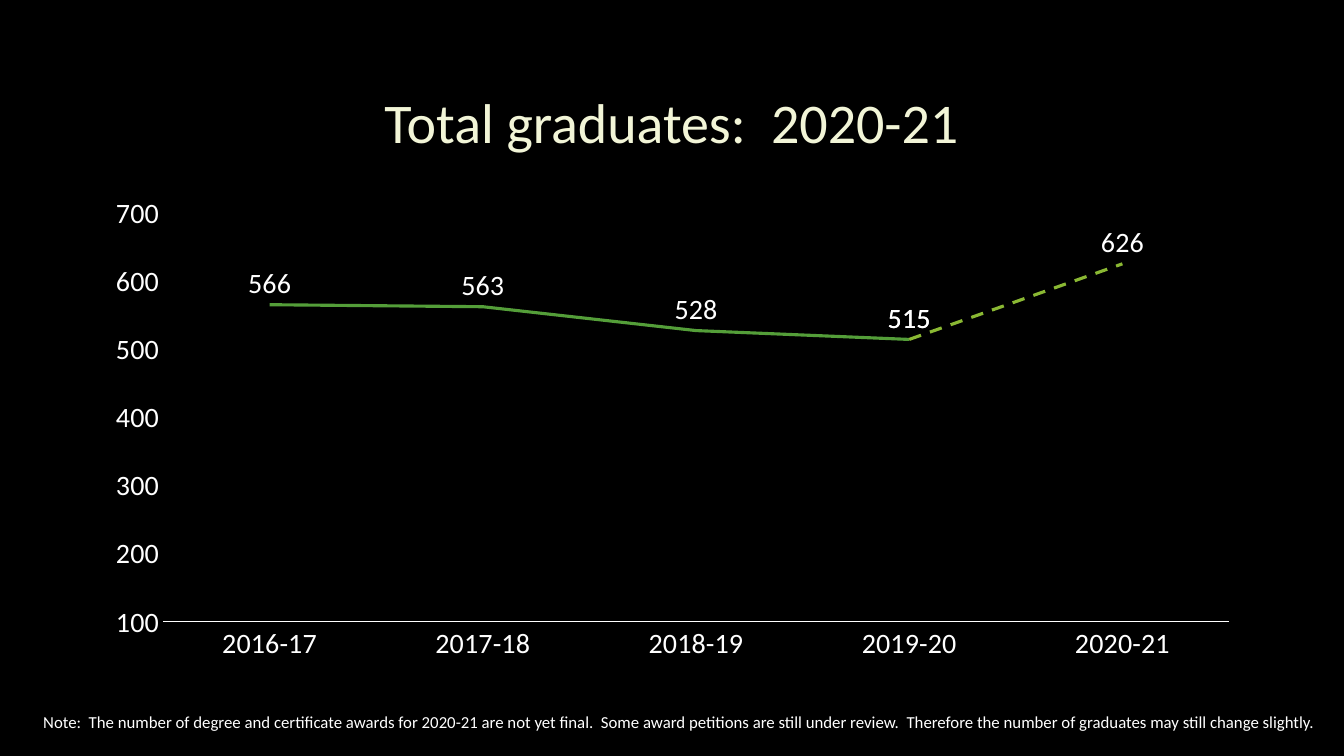
from lxml import etree
from pptx import Presentation
from pptx.chart.data import CategoryChartData
from pptx.dml.color import RGBColor
from pptx.enum.chart import XL_CHART_TYPE as ChartType
from pptx.enum.chart import XL_LABEL_POSITION as LabelPosition
from pptx.enum.chart import XL_MARKER_STYLE as MarkerStyle
from pptx.enum.chart import XL_TICK_MARK as TickMark
from pptx.enum.dml import MSO_LINE as LineDash
from pptx.enum.text import MSO_ANCHOR as Anchor
from pptx.enum.text import MSO_AUTO_SIZE as AutoSize
from pptx.enum.text import PP_ALIGN as Align
from pptx.oxml import parse_xml
from pptx.util import Inches, Pt

FONT = "Calibri"
COLORS = {
    "background": "000000",
    "title": "F2F5D7",
    "title_outline": "404040",
    "text": "FFFFFF",
    "final": "549E39",
    "provisional": "8AB833",
}
DRAWING = "http://schemas.openxmlformats.org/drawingml/2006/main"

YEARS = ["2016-17", "2017-18", "2018-19", "2019-20", "2020-21"]
SERIES = [
    ("Series 1", [566, 563, 528, 515, None], "final", LineDash.SOLID),
    ("Series 2", [None, None, None, 515, 626], "provisional", LineDash.DASH),
]


def color(name):
    return RGBColor.from_string(COLORS[name])


def style_font(font, size, color_name):
    font.name = FONT
    font.size = Pt(size)
    font.bold = False
    font.color.rgb = color(color_name)


def add_run(paragraph, text, size, color_name):
    run = paragraph.add_run()
    run.text = text
    style_font(run.font, size, color_name)
    return run


def outline_run(run, color_name, width, opacity):
    outline = parse_xml(
        f'<a:ln xmlns:a="{DRAWING}" w="{Pt(width)}"><a:solidFill>'
        f'<a:srgbClr val="{COLORS[color_name]}"><a:alpha val="{opacity * 1000}"/>'
        "</a:srgbClr></a:solidFill></a:ln>"
    )
    run.font._element.insert(0, outline)


def place_title(slide, left, top, width, height):
    title = slide.shapes.title
    title.left, title.top, title.width, title.height = left, top, width, height
    frame = title.text_frame
    frame.vertical_anchor = Anchor.MIDDLE
    paragraph = frame.paragraphs[0]
    paragraph.alignment = Align.CENTER
    run = add_run(paragraph, "Total graduates:  2020-21", 40, "title")
    outline_run(run, "title_outline", 0.75, 10)


def style_axes(chart):
    for axis in (chart.category_axis, chart.value_axis):
        axis.has_major_gridlines = False
        axis.major_tick_mark = TickMark.NONE
        axis.minor_tick_mark = TickMark.NONE
        style_font(axis.tick_labels.font, 20, "text")
    axis_line = chart.category_axis.format.line
    axis_line.color.rgb = color("text")
    axis_line.width = Pt(0.75)
    value_axis = chart.value_axis
    value_axis.format.line.fill.background()
    value_axis.minimum_scale = 100
    value_axis.maximum_scale = 700
    value_axis.major_unit = 100


def style_series(series, color_name, dash):
    series.smooth = False
    series.marker.style = MarkerStyle.NONE
    line = series.format.line
    line.color.rgb = color(color_name)
    line.width = Pt(2.25)
    line.dash_style = dash
    labels = series.data_labels
    labels.show_value = True
    labels.position = LabelPosition.ABOVE
    style_font(labels.font, 20, "text")


def add_graduates_chart(slide, left, top, width, height):
    data = CategoryChartData()
    data.categories = YEARS
    for name, values, _, _ in SERIES:
        data.add_series(name, values)
    chart = slide.shapes.add_chart(
        ChartType.LINE, left, top, width, height, data
    ).chart
    chart.has_title = False
    chart.has_legend = False
    style_font(chart.font, 20, "text")
    plot = chart.plots[0]
    plot.vary_by_categories = False
    style_axes(chart)
    for series, (_, _, color_name, dash) in zip(plot.series, SERIES):
        style_series(series, color_name, dash)


def add_note(slide, left, top, width, height):
    frame = slide.shapes.add_textbox(left, top, width, height).text_frame
    frame.word_wrap = False
    frame.auto_size = AutoSize.SHAPE_TO_FIT_TEXT
    add_run(
        frame.paragraphs[0],
        "Note:  The number of degree and certificate awards for 2020-21 are not "
        "yet final.  Some award petitions are still under review.  Therefore the "
        "number of graduates may still change slightly.",
        12,
        "text",
    )


def build_graduates_slide(presentation):
    slide = presentation.slides.add_slide(presentation.slide_layouts[5])
    fill = slide.background.fill
    fill.solid()
    fill.fore_color.rgb = color("background")
    place_title(slide, Inches(1), Inches(0.67), Inches(11.32), Inches(1.06))
    add_graduates_chart(
        slide, Inches(0.92), Inches(1.85), Inches(11.5), Inches(4.8)
    )
    add_note(slide, Inches(0.33), Inches(7.01), Inches(13.01), Inches(0.3))


def main():
    presentation = Presentation()
    presentation.slide_width = Inches(13.33)
    presentation.slide_height = Inches(7.5)
    build_graduates_slide(presentation)
    presentation.save("out.pptx")


if __name__ == "__main__":
    main()
